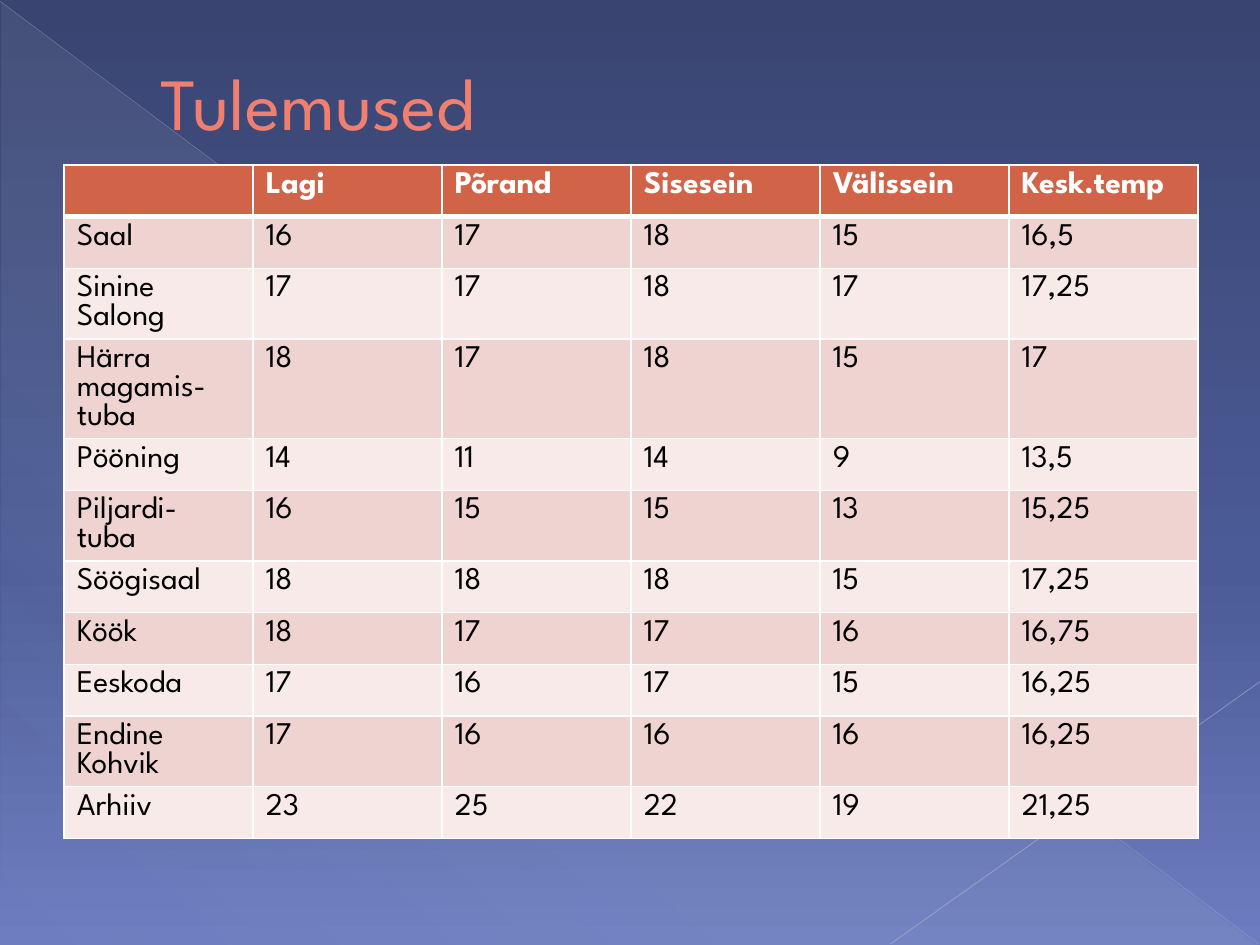
from dataclasses import dataclass

from lxml.etree import SubElement
from pptx import Presentation
from pptx.dml.color import RGBColor
from pptx.enum.shapes import MSO_CONNECTOR, MSO_SHAPE
from pptx.enum.text import MSO_ANCHOR, MSO_AUTO_SIZE, PP_ALIGN
from pptx.oxml import parse_xml
from pptx.oxml.ns import nsdecls, qn
from pptx.util import Inches, Pt

FONT = "League Spartan"
COLORS = {
    "title": "EF7F6E", "title_edge": "914533", "header": "D16349",
    "band_dark": "EED3D0", "band_light": "F7EAE9", "white": "FFFFFF",
    "black": "000000", "haze": "C5D1D7", "falling": "BABECD", "rising": "C2C5D2",
    "bg_top": "394471", "bg_mid": "4B5B97", "bg_bottom": "6C7CC0",
}
HEADERS = ["", "Lagi", "Põrand", "Sisesein", "Välissein", "Kesk.temp"]


@dataclass
class Room:
    name: str
    temps: tuple
    mean: str


@dataclass
class Ray:
    start: tuple
    end: tuple
    color: str
    width: float
    alpha: int


ROOMS = [
    Room("Saal", (16, 17, 18, 15), "16,5"),
    Room("Sinine Salong", (17, 17, 18, 17), "17,25"),
    Room("Härra magamis-tuba", (18, 17, 18, 15), "17"),
    Room("Pööning", (14, 11, 14, 9), "13,5"),
    Room("Piljardi-\vtuba", (16, 15, 15, 13), "15,25"),
    Room("Söögisaal", (18, 18, 18, 15), "17,25"),
    Room("Köök", (18, 17, 17, 16), "16,75"),
    Room("Eeskoda", (17, 16, 17, 15), "16,25"),
    Room("Endine Kohvik", (17, 16, 16, 16), "16,25"),
    Room("Arhiiv", (23, 25, 22, 19), "21,25"),
]
RAYS = [
    Ray((0, 0.01), (9.99, 7.49), "falling", 0.39, 35),
    Ray((10, 5.41), (7.07, 7.49), "rising", 0.47, 45),
]


def rgb(name: str) -> RGBColor:
    return RGBColor.from_string(COLORS[name])


def set_gradient(fill, stops: list, angle: int) -> None:
    fill.gradient()
    grad = fill._fill._gradFill
    gs_lst = grad.find(qn("a:gsLst"))
    for gs in list(gs_lst):
        gs_lst.remove(gs)
    for pos, color, alpha in stops:
        gs = SubElement(gs_lst, qn("a:gs"), pos=str(pos * 1000))
        clr = SubElement(gs, qn("a:srgbClr"), val=COLORS[color])
        if alpha < 100:
            SubElement(clr, qn("a:alpha"), val=str(alpha * 1000))
    grad.find(qn("a:lin")).set("ang", str(angle * 60000))


def write(tf, text: str, *, size: float, color: str, bold: bool = False) -> None:
    p = tf.paragraphs[0]
    p.text = text
    p.alignment = PP_ALIGN.LEFT
    for r in p.runs:
        r.font.name = FONT
        r.font.size = Pt(size)
        r.font.bold = bold
        r.font.color.rgb = rgb(color)


def add_ray(s, ray: Ray) -> None:
    ends = [Inches(v) for v in ray.start + ray.end]
    line = s.shapes.add_connector(MSO_CONNECTOR.STRAIGHT, *ends)
    line.line.color.rgb = rgb(ray.color)
    line.line.width = Pt(ray.width)
    clr = line._element.spPr.find(".//" + qn("a:srgbClr"))
    SubElement(clr, qn("a:alpha"), val=str(ray.alpha * 1000))
    SubElement(line._element.spPr, qn("a:effectLst"))


def add_backdrop(s) -> None:
    set_gradient(s.background.fill,
                 [(0, "bg_top", 100), (60, "bg_mid", 100), (100, "bg_bottom", 100)], 90)
    sp = s.shapes.add_shape(MSO_SHAPE.RIGHT_TRIANGLE, Inches(0.01), Inches(0.02),
                            Inches(9.98), Inches(7.48))
    sp.shadow.inherit = False
    sp.line.fill.background()
    set_gradient(sp.fill, [(0, "haze", 10), (70, "haze", 8), (100, "haze", 1)], 133)
    for ray in RAYS:
        add_ray(s, ray)


def format_title(s) -> None:
    title = s.shapes.title
    title._element.getparent().append(title._element)
    title.left, title.top = Inches(0.5), Inches(0.29)
    title.width, title.height = Inches(8.91), Inches(1.02)
    tf = title.text_frame
    tf.auto_size = MSO_AUTO_SIZE.NONE
    tf.vertical_anchor = MSO_ANCHOR.MIDDLE
    write(tf, " Tulemused", size=42, color="title")
    p = tf.paragraphs[0]
    p._p.get_or_add_pPr().set("marL", str(Inches(0.53)))
    p._p.get_or_add_pPr().set("indent", "0")
    p.runs[0]._r.rPr.insert(0, parse_xml(
        f'<a:ln {nsdecls("a")} w="{Pt(0.5)}"><a:solidFill>'
        f'<a:srgbClr val="{COLORS["title_edge"]}"/></a:solidFill></a:ln>'))


def set_borders(cell, bottom: float) -> None:
    tc_pr = cell._tc.get_or_add_tcPr()
    for i, (side, width) in enumerate((("L", 1), ("R", 1), ("T", 1), ("B", bottom))):
        tc_pr.insert(i, parse_xml(
            f'<a:ln{side} {nsdecls("a")} w="{Pt(width)}"><a:solidFill>'
            f'<a:srgbClr val="{COLORS["white"]}"/></a:solidFill></a:ln{side}>'))


def add_results(s) -> None:
    rows = [HEADERS] + [[room.name, *map(str, room.temps), room.mean] for room in ROOMS]
    row_height = Inches(0.41)
    table = s.shapes.add_table(len(rows), len(HEADERS), Inches(0.51), Inches(1.31),
                               Inches(9), row_height * len(rows)).table
    for i, values in enumerate(rows):
        table.rows[i].height = row_height
        header = i == 0
        band = "header" if header else "band_dark" if i % 2 else "band_light"
        for j, value in enumerate(values):
            cell = table.cell(i, j)
            cell.fill.solid()
            cell.fill.fore_color.rgb = rgb(band)
            set_borders(cell, 3 if header else 1)
            if value:
                write(cell.text_frame, value, size=18, bold=header,
                      color="white" if header else "black")


def main() -> None:
    prs = Presentation()
    prs.slide_width, prs.slide_height = Inches(10), Inches(7.5)
    s = prs.slides.add_slide(prs.slide_layouts[5])
    add_backdrop(s)
    format_title(s)
    add_results(s)
    prs.save("out.pptx")


if __name__ == "__main__":
    main()
